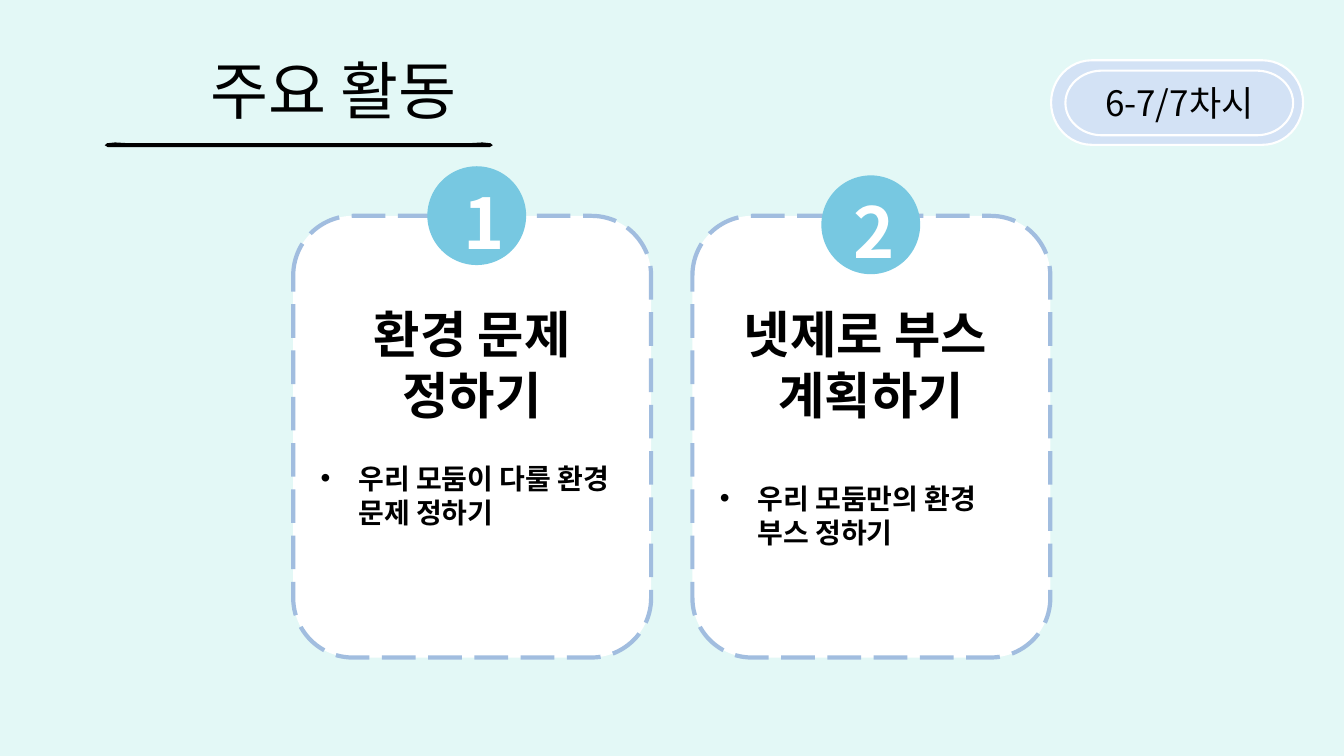
from lxml.etree import SubElement
from pptx import Presentation
from pptx.dml.color import RGBColor
from pptx.enum.dml import MSO_LINE_DASH_STYLE as Dash
from pptx.enum.shapes import MSO_SHAPE as Shape
from pptx.enum.text import MSO_ANCHOR as Anchor, PP_ALIGN as Align
from pptx.oxml.ns import qn
from pptx.util import Cm, Pt

FONT = "Noto Sans CJK KR"
COLORS = {
    "background": "E3F8F6",
    "ink": "000000",
    "white": "FFFFFF",
    "card_border": "A1BDDF",
    "circle": "77C8E1",
    "badge": "D3E2F5",
}
CARD_TOP, CARD_WIDTH, CARD_HEIGHT = 5.44, 9.02, 11.13
CIRCLE_SIZE = 2.49
INDENT = Cm(0.95)


def color(name):
    return RGBColor.from_string(COLORS[name])


def add_span(para, text, size, ink="ink", bold=False):
    span = para.add_run()
    span.text = text
    span.font.size = Pt(size)
    span.font.bold = bold
    span.font.color.rgb = color(ink)
    span.font.name = FONT
    SubElement(span.font._element, qn("a:ea"), typeface=FONT)


def add_bullet(para):
    """Give the paragraph a black dot and a hanging indent."""
    props = para._p.get_or_add_pPr()
    props.set("marL", str(INDENT))
    props.set("indent", str(-INDENT))
    tint = SubElement(props, qn("a:buClr"))
    SubElement(tint, qn("a:srgbClr"), val=COLORS["ink"])
    SubElement(props, qn("a:buFont"), typeface="Arial")
    SubElement(props, qn("a:buChar"), char="•")


def add_filled_shape(shapes, kind, left, top, width, height, fill, line=None, weight=0):
    box = shapes.add_shape(kind, Cm(left), Cm(top), Cm(width), Cm(height))
    box.shadow.inherit = False
    box.fill.solid()
    box.fill.fore_color.rgb = color(fill)
    if line:
        box.line.color.rgb = color(line)
        box.line.width = Pt(weight)
    else:
        box.line.fill.background()
    return box


def add_title(page, text):
    title = page.shapes.title
    title.left, title.top, title.width, title.height = Cm(2.36), Cm(1.35), Cm(12.07), Cm(1.78)
    title.text_frame.vertical_anchor = Anchor.MIDDLE
    para = title.text_frame.paragraphs[0]
    para.alignment = Align.CENTER
    add_span(para, text, 45)


def add_underline(page):
    """Draw the brush stroke, whose right end mirrors its left end."""
    middle = 7.53
    left_end = [(3.25, 3.61), (2.9, 3.59), (2.7, 3.61), (2.64, 3.66), (2.72, 3.71), (3.28, 3.71)]
    right_end = [(2 * middle - x, y) for x, y in reversed(left_end)]
    points = [(Cm(x), Cm(y)) for x, y in left_end + right_end]
    builder = page.shapes.build_freeform(*points[0])
    builder.add_line_segments(points[1:], close=True)
    stroke = builder.convert_to_shape()
    stroke.shadow.inherit = False
    stroke.fill.solid()
    stroke.fill.fore_color.rgb = color("ink")
    stroke.line.fill.background()


def add_card(page, left, headings, activity, gap):
    card = add_filled_shape(page.shapes, Shape.FLOWCHART_ALTERNATE_PROCESS, left, CARD_TOP,
                            CARD_WIDTH, CARD_HEIGHT, "white", "card_border", 3)
    card.line.dash_style = Dash.LONG_DASH
    frame = card.text_frame
    frame.word_wrap = True
    frame.vertical_anchor = Anchor.TOP
    frame.margin_top = Cm(1.75)
    para = frame.paragraphs[0]
    for heading in headings:
        para.alignment = Align.CENTER
        para.line_spacing = Pt(43.5)
        add_span(para, heading, 36, bold=True)
        para = frame.add_paragraph()
    para.alignment = Align.LEFT
    para.line_spacing = Pt(24.3)
    para.space_before = Pt(gap)
    add_bullet(para)
    add_span(para, activity, 20, bold=True)


def add_number(page, digit, left, top, digit_left):
    group = page.shapes.add_group_shape()
    add_filled_shape(group.shapes, Shape.OVAL, left, top, CIRCLE_SIZE, CIRCLE_SIZE, "circle")
    box = group.shapes.add_textbox(Cm(digit_left), Cm(top), Cm(1.4), Cm(2.39))
    box.text_frame.word_wrap = False
    para = box.text_frame.paragraphs[0]
    para.alignment = Align.LEFT
    para.line_spacing = Pt(66)
    add_span(para, digit, 50, "white", bold=True)


def add_badge(page, text):
    group = page.shapes.add_group_shape()
    for bounds in ((26.49, 1.52, 6.35, 2.13), (26.85, 1.78, 5.74, 1.63)):
        pill = add_filled_shape(group.shapes, Shape.FLOWCHART_TERMINATOR, *bounds,
                                "badge", "white", 1.5)
    pill.text_frame.vertical_anchor = Anchor.MIDDLE
    para = pill.text_frame.paragraphs[0]
    para.alignment = Align.CENTER
    add_span(para, text, 25)


def main():
    deck = Presentation()
    deck.slide_width, deck.slide_height = Cm(33.87), Cm(19.05)
    page = deck.slides.add_slide(deck.slide_layouts[5])
    page.background.fill.solid()
    page.background.fill.fore_color.rgb = color("background")

    add_title(page, "주요 활동")
    add_underline(page)
    add_card(page, 7.39, ["환경 문제 정하기"], "우리 모둠이 다룰 환경 문제 정하기", 26)
    add_card(page, 17.45, ["넷제로 부스 ", "계획하기"], "우리 모둠만의 환경 부스 정하기", 40)
    add_number(page, "1", 10.77, 4.19, 11.43)
    add_number(page, "2", 20.7, 4.42, 21.26)
    add_badge(page, "6-7/7차시")
    deck.save("out.pptx")


if __name__ == "__main__":
    main()
